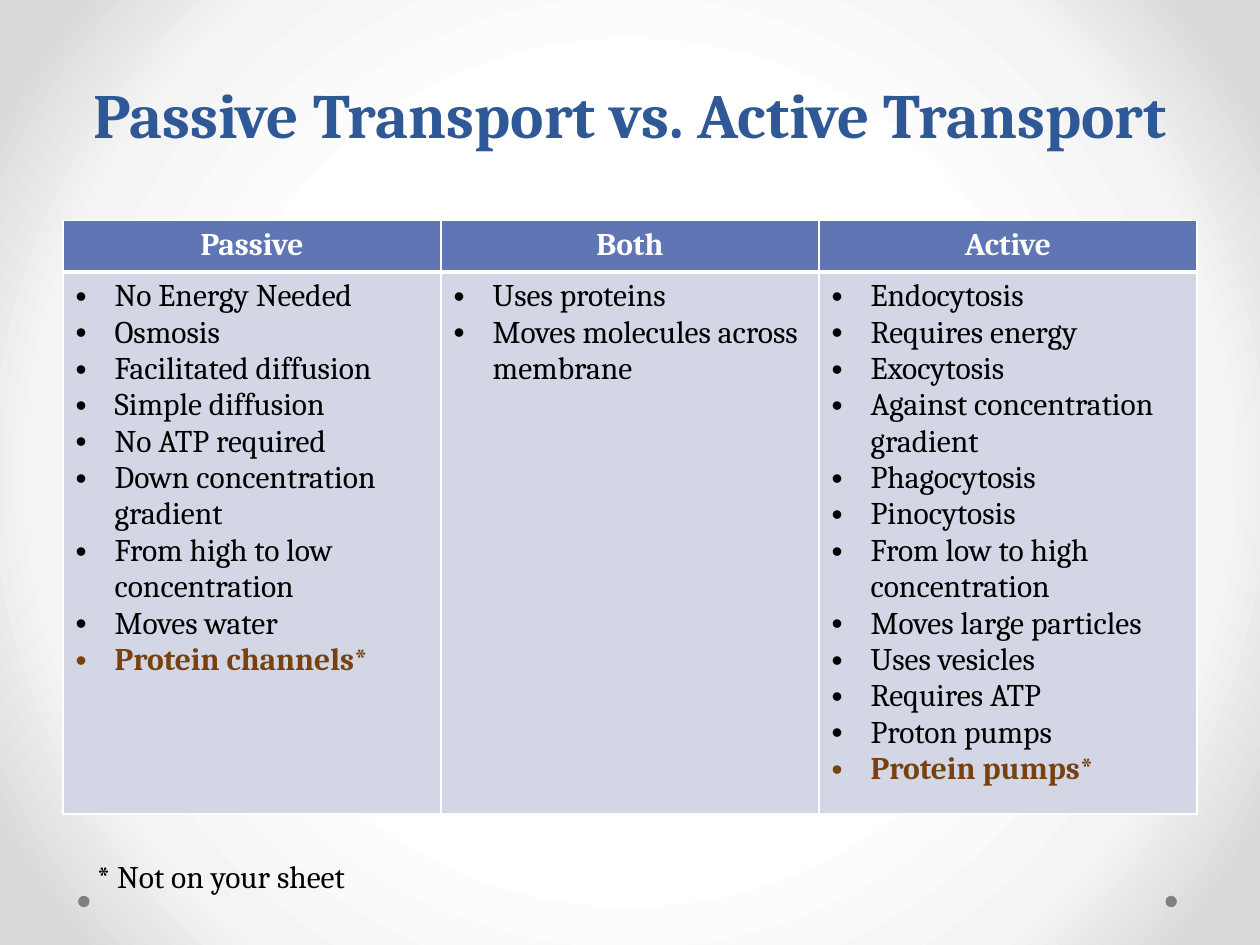
from pptx import Presentation
from pptx.util import Inches, Pt
from pptx.dml.color import RGBColor
from pptx.enum.shapes import MSO_SHAPE as Shape
from pptx.enum.text import PP_ALIGN as Align, MSO_ANCHOR as Anchor
from pptx.oxml import parse_xml
from pptx.oxml.ns import nsdecls, qn
from lxml.etree import SubElement as Sub

FONT = "Cambria"
BLUE, HEAD, BODY = "2F5897", "6076B4", "D2D6E5"
BLACK, WHITE, BROWN, GRAY = "000000", "FFFFFF", "77420D", "808080"

COLUMNS = {
    "Passive": [
        "No Energy Needed", "Osmosis", "Facilitated diffusion",
        "Simple diffusion", "No ATP required", "Down concentration gradient",
        "From high to low concentration", "Moves water", "Protein channels*",
    ],
    "Both": ["Uses proteins", "Moves molecules across membrane"],
    "Active": [
        "Endocytosis", "Requires energy", "Exocytosis",
        "Against concentration gradient", "Phagocytosis", "Pinocytosis",
        "From low to high concentration", "Moves large particles",
        "Uses vesicles", "Requires ATP", "Proton pumps", "Protein pumps*",
    ],
}


def color(code):
    return RGBColor.from_string(code)


class Deck:
    def __init__(self):
        self.show = Presentation()
        self.show.slide_width, self.show.slide_height = Inches(10), Inches(7.5)
        self.slide = self.show.slides.add_slide(self.show.slide_layouts[6])

    def backdrop(self, stops):
        """Fill the background with a gradient running out from the centre."""
        marks = "".join(
            f'<a:gs pos="{pos * 1000}"><a:srgbClr val="{code}"/></a:gs>'
            for pos, code in stops)
        self.slide.element.cSld.insert(0, parse_xml(
            f'<p:bg {nsdecls("p", "a")}><p:bgPr><a:gradFill rotWithShape="1">'
            f'<a:gsLst>{marks}</a:gsLst><a:path path="circle">'
            '<a:fillToRect l="50000" t="50000" r="50000" b="50000"/></a:path>'
            '</a:gradFill><a:effectLst/></p:bgPr></p:bg>'))

    def style(self, para, code, size=18, bold=False):
        font = para.font
        font.name, font.size, font.bold = FONT, Pt(size), bold
        font.color.rgb = color(code)

    def dot(self, left, top, size):
        dot = self.slide.shapes.add_shape(
            Shape.OVAL, Inches(left), Inches(top), Inches(size), Inches(size))
        dot.shadow.inherit = False
        dot.fill.solid()
        dot.fill.fore_color.rgb = color(GRAY)
        dot.line.fill.background()

    def text(self, words, left, top, width, height, code, **look):
        box = self.slide.shapes.add_textbox(
            Inches(left), Inches(top), Inches(width), Inches(height))
        frame = box.text_frame
        frame.word_wrap = True
        para = frame.paragraphs[0]
        para.text = words
        self.style(para, code, **look)
        return frame

    def bullet(self, para):
        props = para._p.get_or_add_pPr()
        props.set("marL", str(Inches(0.31)))
        props.set("indent", str(-Inches(0.31)))
        Sub(props, qn("a:buFont")).set("typeface", "Arial")
        Sub(props, qn("a:buChar")).set("char", "•")

    def paint(self, cell, code, base):
        """Fill a cell and rule it in white, with a base line of its own width."""
        cell.fill.solid()
        cell.fill.fore_color.rgb = color(code)
        props = cell._tc.get_or_add_tcPr()
        for spot, (side, width) in enumerate(zip("LRTB", (1, 1, 1, base))):
            props.insert(spot, parse_xml(
                f'<a:ln{side} {nsdecls("a")} w="{Pt(width)}"><a:solidFill>'
                f'<a:srgbClr val="{WHITE}"/></a:solidFill></a:ln{side}>'))

    def table(self, columns, left, top, width, heights):
        grid = self.slide.shapes.add_table(
            len(heights), len(columns), Inches(left), Inches(top),
            Inches(width), Inches(sum(heights))).table
        for row, height in zip(grid.rows, heights):
            row.height = Inches(height)
        for col, (name, items) in enumerate(columns.items()):
            head, body = grid.cell(0, col), grid.cell(1, col)
            self.paint(head, HEAD, 3)
            self.paint(body, BODY, 1)
            head.text = name
            title = head.text_frame.paragraphs[0]
            title.alignment = Align.CENTER
            self.style(title, WHITE, bold=True)
            body.text = "\n".join(items)
            for para, item in zip(body.text_frame.paragraphs, items):
                extra = item.endswith("*")
                self.style(para, BROWN if extra else BLACK, bold=extra)
                self.bullet(para)


def main():
    deck = Deck()
    deck.backdrop([(50, WHITE), (76, "F4F4F4"), (92, "DADADA")])
    for left in (9.25, 0.62):
        deck.dot(left, 7.11, 0.09)
    title = deck.text("Passive Transport vs. Active Transport",
                      0.5, 0.25, 9, 1, BLUE, size=36, bold=True)
    title.vertical_anchor = Anchor.BOTTOM
    title.paragraphs[0].alignment = Align.CENTER
    title.paragraphs[0].line_spacing = Pt(58)
    deck.table(COLUMNS, 0.5, 1.75, 9, (0.41, 4.14))
    deck.text("* Not on your sheet", 0.67, 6.75, 8, 0.4, BLACK)
    deck.show.save("out.pptx")


if __name__ == "__main__":
    main()
